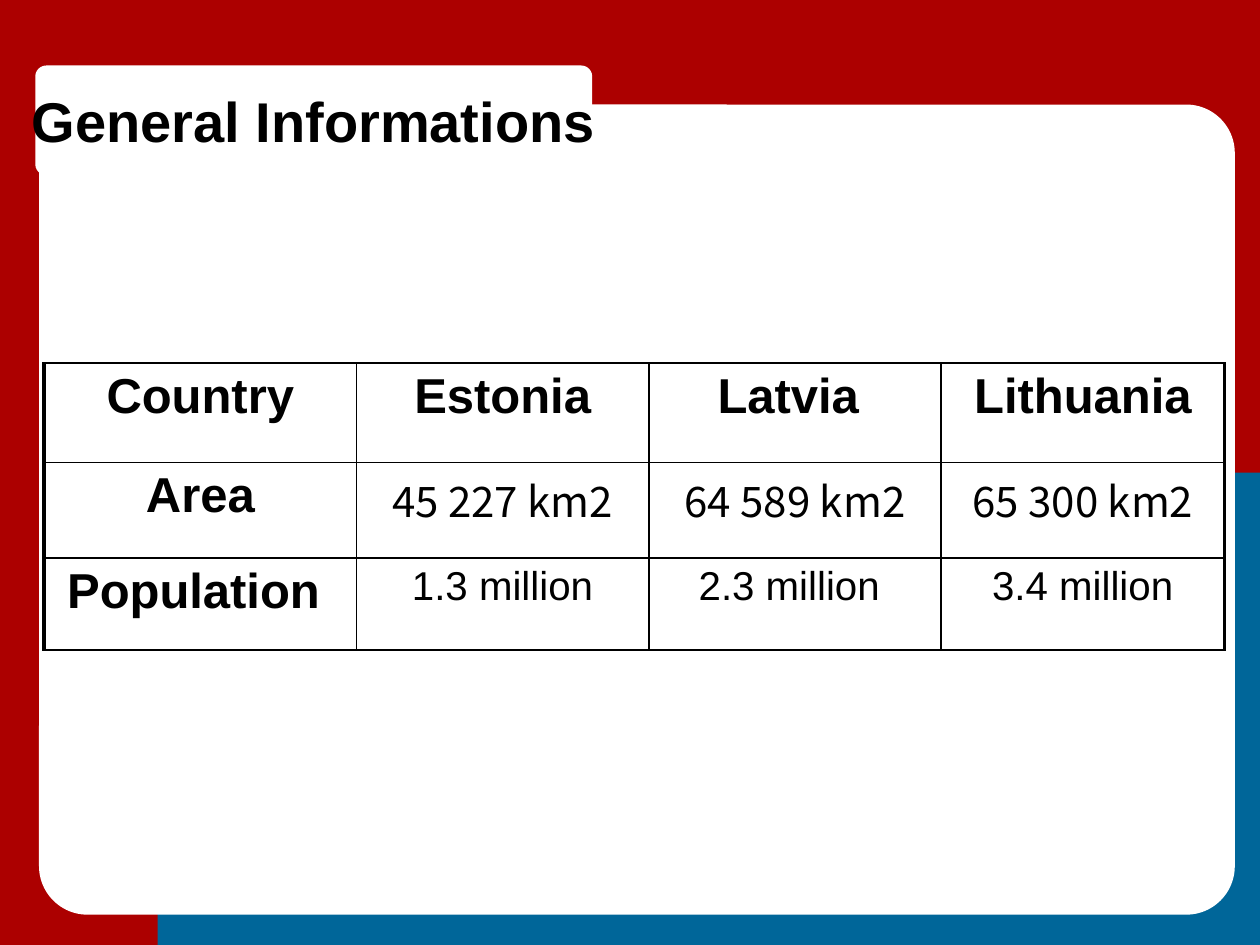
from pptx import Presentation
from pptx.util import Inches, Pt
from pptx.dml.color import RGBColor
from pptx.enum.shapes import MSO_SHAPE
from pptx.enum.text import MSO_ANCHOR, PP_ALIGN
from lxml.etree import SubElement
from pptx.oxml.ns import qn

HUES = {"red": "AC0000", "blue": "006699", "white": "FFFFFF", "black": "000000"}
WIDE, HIGH = 10, 7.5


def add_box(left, top, width, height, hue, round_by=None):
    kind = MSO_SHAPE.RECTANGLE if round_by is None else MSO_SHAPE.ROUNDED_RECTANGLE
    box = slide.shapes.add_shape(kind, *map(Inches, (left, top, width, height)))
    if round_by is not None:
        box.adjustments[0] = round_by
    box.shadow.inherit = False
    box.fill.solid()
    box.fill.fore_color.rgb = RGBColor.from_string(HUES[hue])
    box.line.fill.background()
    return box


def set_text(para, text, size, face, bold):
    para.text = text
    para.alignment = PP_ALIGN.CENTER
    font = para.font
    font.size, font.name, font.bold = Pt(size), face, bold
    font.color.rgb = RGBColor.from_string(HUES["black"])


deck = Presentation()
deck.slide_width, deck.slide_height = Inches(WIDE), Inches(HIGH)
slide = deck.slides.add_slide(deck.slide_layouts[6])

add_box(0, 0, WIDE, HIGH, "red")
add_box(WIDE / 8, HIGH / 2, WIDE * 7 / 8, HIGH / 2, "blue")
add_box(0.31, 0.83, 9.49, 6.43, "white", 0.06)
title = add_box(0.28, 0.52, 4.42, 0.87, "white", 0.1)
frame = title.text_frame
frame.word_wrap = False
frame.vertical_anchor = MSO_ANCHOR.MIDDLE
set_text(frame.paragraphs[0], "General Informations", 32, "Arial", True)

rows = [
    ["Country", "Estonia", "Latvia ", "Lithuania"],
    ["Area", "45 227 km2", "64 589 km2", "65 300 km2"],
    ["Population ", "1.3 million", "2.3 million ", "3.4 million"],
]
head = (28, "Arial", True)
styles = [head, (24, "Noto Sans CJK KR", False), (23, "Arial", False)]
widths = [2.48, 2.32, 2.32, 2.25]
heights = [0.79, 0.76, 0.73]

table = slide.shapes.add_table(
    len(rows), len(widths), Inches(0.35), Inches(2.88),
    Inches(sum(widths)), Inches(sum(heights))).table
table.first_row = table.horz_banding = False
for col, width in zip(table.columns, widths):
    col.width = Inches(width)
for row, height in zip(table.rows, heights):
    row.height = Inches(height)

last = len(widths) - 1
for r, texts in enumerate(rows):
    for c, text in enumerate(texts):
        cell = table.cell(r, c)
        style = styles[r] if c else head
        para = cell.text_frame.paragraphs[0]
        set_text(para, text, *style)
        para.space_before = Pt(style[0] * 0.2)
        props = cell._tc.get_or_add_tcPr()
        for side in "LRTB":
            outer = (side, c) in (("L", 0), ("R", last))
            edge = SubElement(props, qn("a:ln" + side), w=str(Pt(2.25 if outer else 1)))
            fill = SubElement(edge, qn("a:solidFill"))
            SubElement(fill, qn("a:srgbClr"), val=HUES["black"])
        cell.fill.background()

deck.save("out.pptx")
